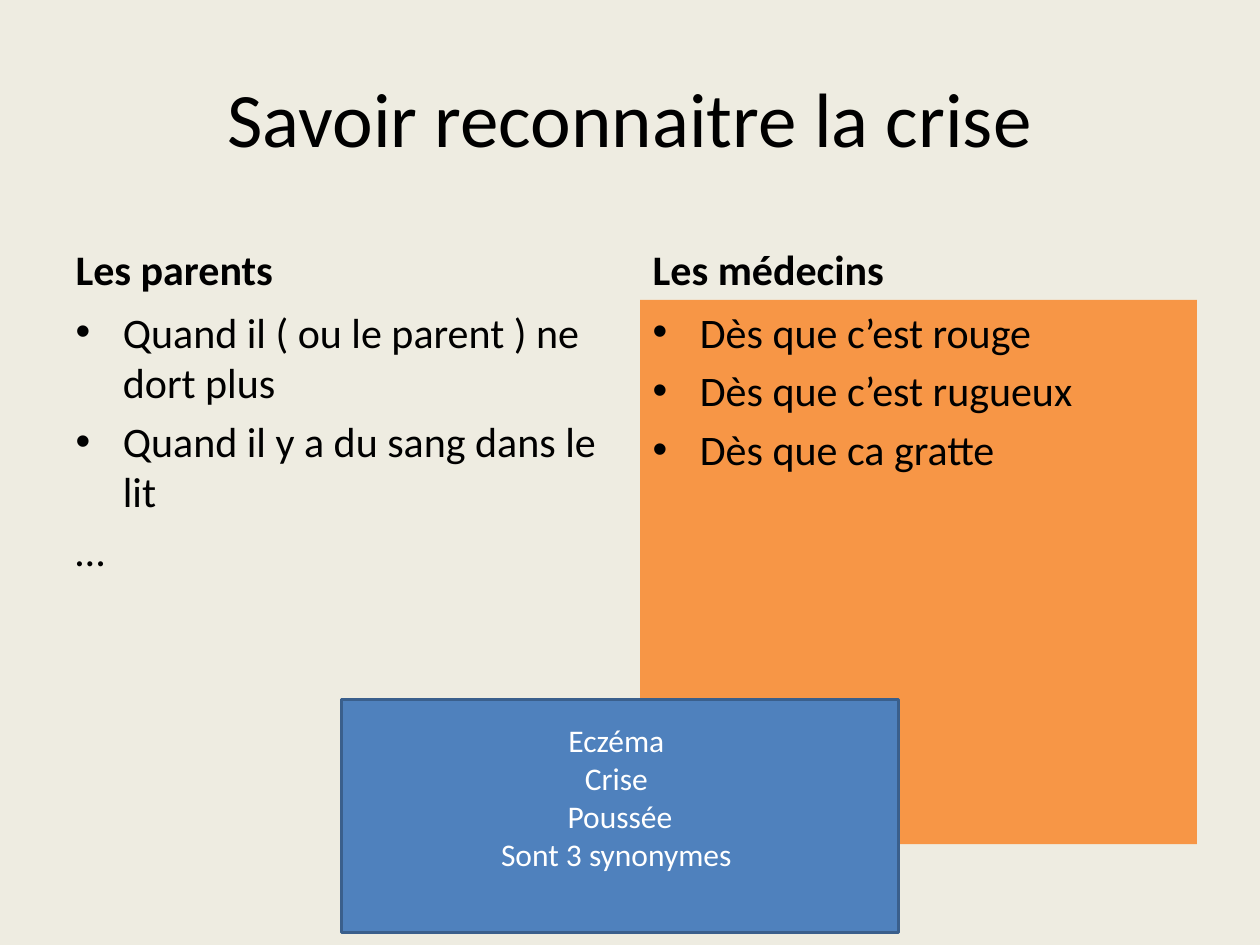
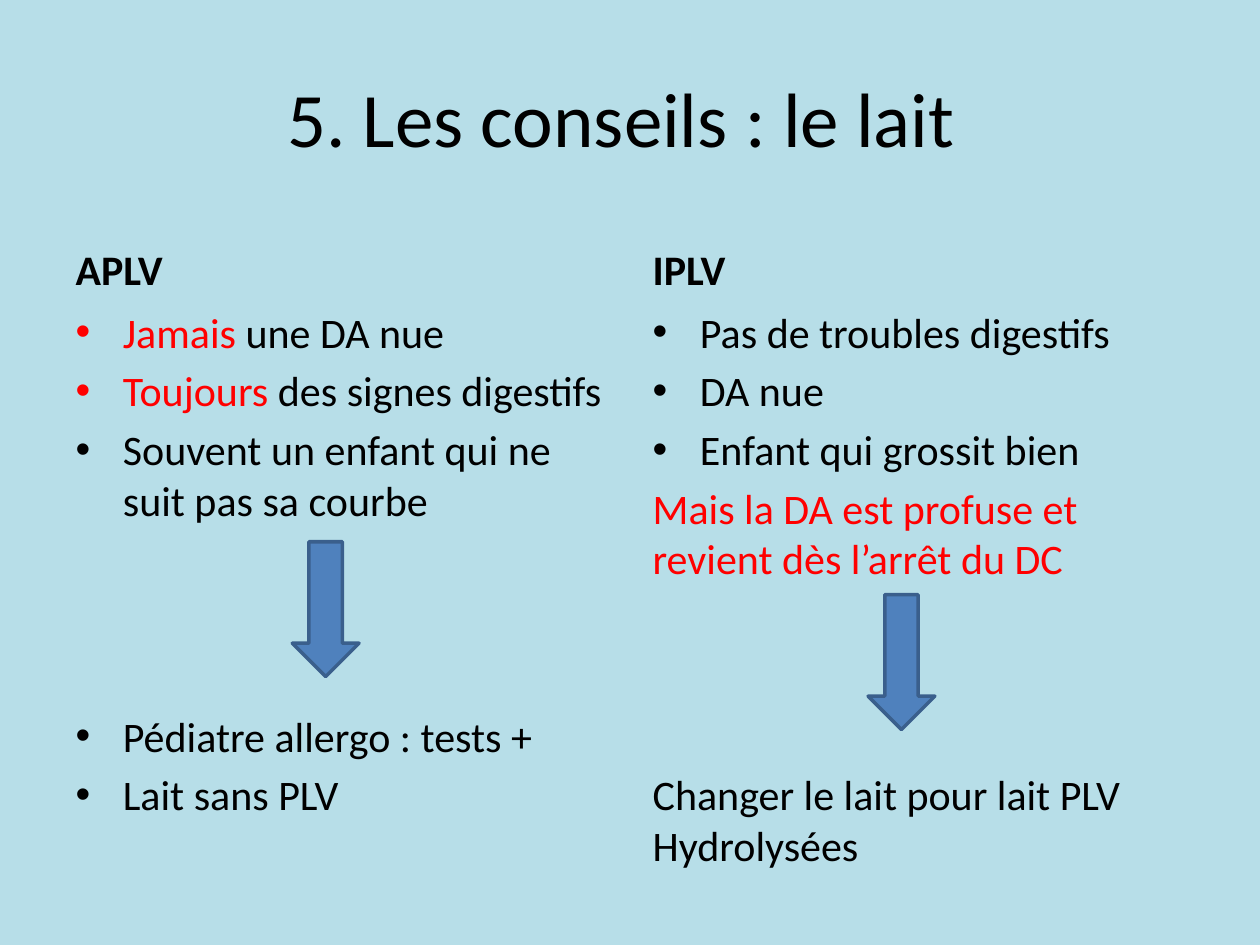
from lxml import etree
from pptx import Presentation
from pptx.dml.color import RGBColor
from pptx.enum import shapes, text
from pptx.oxml import ns
from pptx.util import Inches, Pt

FONT = "Calibri"
BLACK, WHITE, RED = "000000", "FFFFFF", "FF0000"
BEIGE, PALE_BLUE = "EEECE1", "B7DEE8"
ORANGE, BLUE, DARK_BLUE = "F79646", "4F81BD", "3A5F8C"

LEFT, RIGHT = 0.5, 5.08      # column positions
COLUMN_WIDTH = 4.42
COMPARISON_LAYOUT = 4
ARROW_GAP = 106              # points kept free for an arrow


def colour(value):
    return RGBColor.from_string(value)


class ComparisonDeck:
    """Holds the shared style and the current slide."""

    def __init__(self):
        self.deck = Presentation()
        self.deck.slide_width, self.deck.slide_height = Inches(10), Inches(7.5)
        self.page = None

    def new_page(self, background, title):
        layout = self.deck.slide_layouts[COMPARISON_LAYOUT]
        self.page = self.deck.slides.add_slide(layout)
        fill = self.page.background.fill
        fill.solid()
        fill.fore_color.rgb = colour(background)
        box = self.placeholder(0, 0.5, 0.3, 9, 1.25, text.MSO_ANCHOR.MIDDLE)
        paragraph = self.set_spans(box.text_frame.paragraphs[0], [title], 44)
        paragraph.alignment = text.PP_ALIGN.CENTER

    def placeholder(self, index, left, top, width, height, anchor):
        box = self.page.placeholders[index]
        box.left, box.top = Inches(left), Inches(top)
        box.width, box.height = Inches(width), Inches(height)
        frame = box.text_frame
        frame.word_wrap = True
        frame.auto_size = text.MSO_AUTO_SIZE.NONE
        frame.vertical_anchor = anchor
        return box

    def set_spans(self, paragraph, spans, size, bold=False, ink=BLACK):
        """Each span is a string or a (string, colour) pair."""
        font = paragraph.font
        font.name, font.size, font.bold = FONT, Pt(size), bold
        font.color.rgb = colour(ink)
        for span in spans:
            words, tint = (span, None) if isinstance(span, str) else span
            for number, line in enumerate(words.split("\n")):
                if number:
                    paragraph.add_line_break()
                run = paragraph.add_run()
                run.text = line
                if tint:
                    run.font.color.rgb = colour(tint)
        return paragraph

    def column(self, left, heading, items, fill=None):
        """Each item is (spans, bulleted, space before or None)."""
        index = 1 if left == LEFT else 3
        box = self.placeholder(index, left, 1.68, COLUMN_WIDTH, 0.7,
                               text.MSO_ANCHOR.BOTTOM)
        self.set_spans(box.text_frame.paragraphs[0], [heading], 24, bold=True)

        box = self.placeholder(index + 1, left, 2.38, COLUMN_WIDTH, 4.32,
                               text.MSO_ANCHOR.TOP)
        if fill:
            box.fill.solid()
            box.fill.fore_color.rgb = colour(fill)
        frame = box.text_frame
        for number, (spans, bulleted, gap) in enumerate(items):
            paragraph = frame.add_paragraph() if number else frame.paragraphs[0]
            if gap:
                paragraph.space_before = Pt(gap)
            if not bulleted:
                self.remove_bullet(paragraph)
            self.set_spans(paragraph, spans, 24)

    def remove_bullet(self, paragraph):
        properties = paragraph._p.get_or_add_pPr()
        properties.set("marL", "0")
        properties.set("indent", "0")
        etree.SubElement(properties, ns.qn("a:buNone"))

    def shape(self, kind, left, top, width, height):
        shape = self.page.shapes.add_shape(
            kind, Inches(left), Inches(top), Inches(width), Inches(height))
        shape.shadow.inherit = False
        shape.fill.solid()
        shape.fill.fore_color.rgb = colour(BLUE)
        shape.line.color.rgb = colour(DARK_BLUE)
        shape.line.width = Pt(2)
        return shape

    def note(self, left, top, width, height, lines):
        box = self.shape(shapes.MSO_SHAPE.RECTANGLE, left, top, width, height)
        frame = box.text_frame
        frame.word_wrap = True
        frame.vertical_anchor = text.MSO_ANCHOR.MIDDLE
        frame.margin_bottom = Inches(0.35)
        for number, line in enumerate(lines):
            paragraph = frame.add_paragraph() if number else frame.paragraphs[0]
            paragraph.alignment = text.PP_ALIGN.CENTER
            self.set_spans(paragraph, [(line, WHITE)], 18, ink=WHITE)

    def down_arrow(self, left, top):
        self.shape(shapes.MSO_SHAPE.DOWN_ARROW, left, top, 0.53, 1.07)


def bullet(*spans, gap=None):
    return spans, True, gap


def plain(*spans, gap=None):
    return spans, False, gap


def main():
    show = ComparisonDeck()

    # Recognising a flare-up
    show.new_page(BEIGE, "Savoir reconnaitre la crise")
    show.column(LEFT, "Les parents", [
        bullet("Quand il ( ou le parent ) ne dort plus"),
        bullet("Quand il y a du sang dans le lit"),
        plain("…"),
    ])
    show.column(RIGHT, "Les médecins", [
        bullet("Dès que c’est rouge"),
        bullet("Dès que c’est rugueux"),
        bullet("Dès que ca gratte"),
    ], fill=ORANGE)
    show.note(2.71, 5.55, COLUMN_WIDTH, 1.85,
              ["Eczéma ", "Crise ", "Poussée", "Sont 3 synonymes "])

    # Advice about milk
    show.new_page(PALE_BLUE, "5. Les conseils : le lait ")
    show.column(LEFT, "APLV", [
        bullet(("Jamais ", RED), "une DA nue"),
        bullet(("Toujours ", RED), "des signes digestifs"),
        bullet("Souvent un enfant qui ne suit pas sa courbe"),
        bullet("Pédiatre allergo : tests +", gap=ARROW_GAP),
        bullet("Lait sans PLV"),
    ])
    show.column(RIGHT, "IPLV", [
        bullet("Pas de troubles digestifs"),
        bullet("DA nue"),
        bullet("Enfant qui grossit bien"),
        plain(("Mais la DA est profuse et\nrevient dès l’arrêt du DC", RED)),
        plain("Changer le lait pour lait PLV Hydrolysées", gap=ARROW_GAP),
    ])
    show.down_arrow(2.32, 4.3)
    show.down_arrow(6.89, 4.72)

    show.deck.save("out.pptx")


if __name__ == "__main__":
    main()
